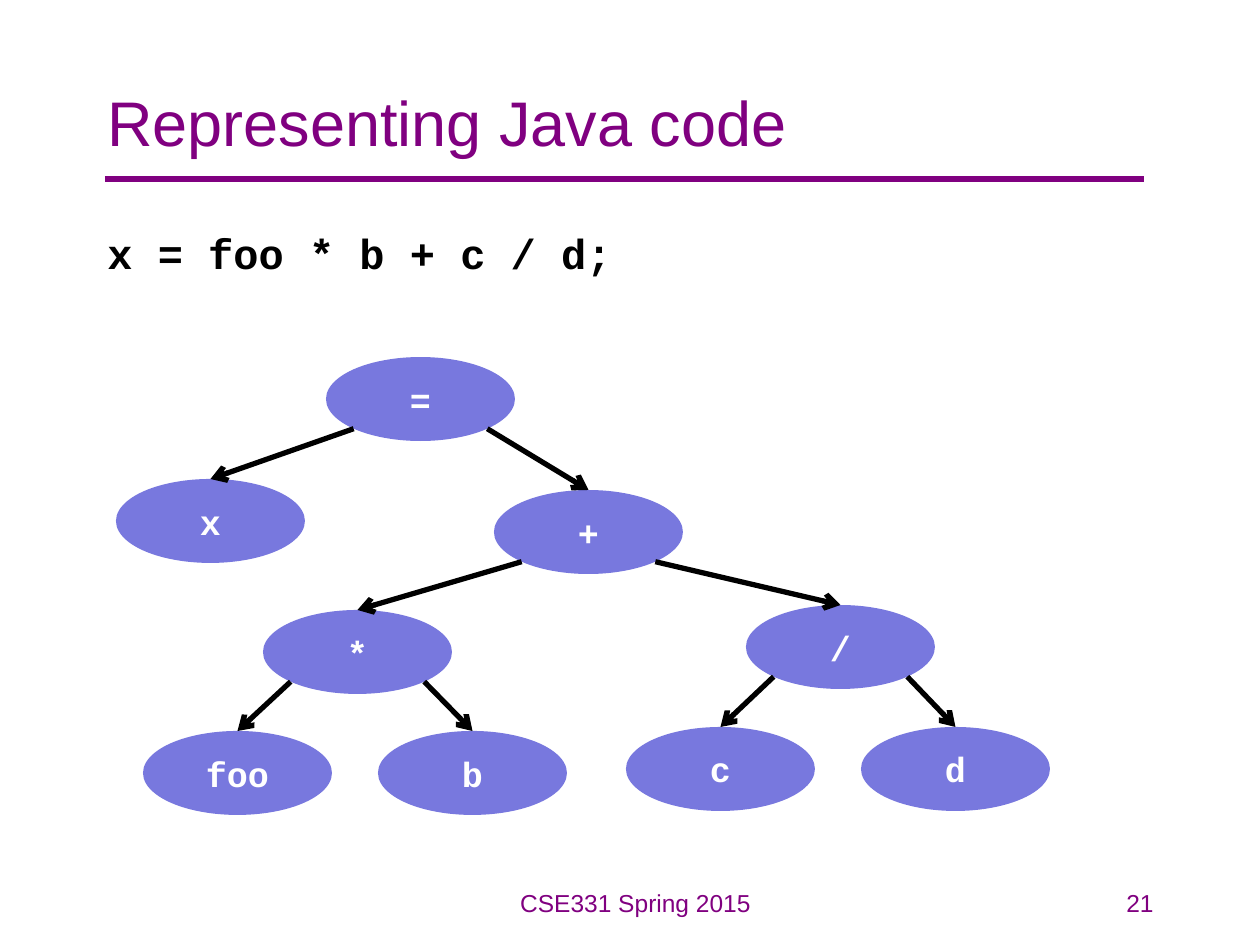
import math
from lxml import etree
from pptx import Presentation
from pptx.dml.color import RGBColor
from pptx.enum.shapes import MSO_CONNECTOR, MSO_SHAPE
from pptx.enum.text import MSO_ANCHOR, PP_ALIGN
from pptx.oxml.ns import qn
from pptx.util import Emu, Pt

LINE, OVAL = MSO_CONNECTOR.STRAIGHT, MSO_SHAPE.OVAL
TOP, MIDDLE = MSO_ANCHOR.TOP, MSO_ANCHOR.MIDDLE
LEFT, CENTER, RIGHT = PP_ALIGN.LEFT, PP_ALIGN.CENTER, PP_ALIGN.RIGHT

PURPLE, BLACK, WHITE, BLUE = "800080", "000000", "FFFFFF", "7878DE"
SANS, MONO = "Arial", "Courier New"
NODE_W, NODE_H = 189, 84

# Label: left, top (relative to the tree's box) and children
TREE = {
    "=": (210, 0, "x", "+"),
    "x": (0, 122),
    "+": (378, 133, "*", "/"),
    "*": (147, 253, "foo", "b"),
    "/": (630, 248, "c", "d"),
    "foo": (27, 374),
    "b": (262, 374),
    "c": (510, 370),
    "d": (745, 370),
}


def px(n):
    return Emu(round(n * 914400 / 126))


def paint(color, code):
    color.rgb = RGBColor.from_string(code)


def write(shape, text, size, code, face=SANS, align=LEFT, anchor=TOP,
          bold=False, before=0):
    frame = shape.text_frame
    frame.word_wrap = True
    frame.vertical_anchor = anchor
    para = frame.paragraphs[0]
    para.alignment = align
    para.space_before = Pt(before)
    run = para.add_run()
    run.text = text
    for name, value in {"size": Pt(size), "name": face, "bold": bold}.items():
        setattr(run.font, name, value)
    paint(run.font.color, code)


def label(slide, box, text, size, code, **look):
    shape = slide.shapes.add_textbox(*map(px, box))
    write(shape, text, size, code, **look)


def stroke(slide, ends, code, arrow=False):
    line = slide.shapes.add_connector(LINE, *map(px, ends))
    line.line.width = Pt(3)
    paint(line.line.color, code)
    props = line.line._get_or_add_ln()
    if arrow:
        etree.SubElement(props, qn("a:tailEnd"), type="arrow")
    etree.SubElement(props.getparent(), qn("a:effectLst"))


def header(slide, x, y, w, h):
    stroke(slide, (x + 10, y + 137, x + w - 22, y + 137), PURPLE)
    label(slide, (x, y, w, h), "Representing Java code", 36, PURPLE,
          anchor=MIDDLE)


def body(slide, x, y, w, h):
    label(slide, (x, y, w, h), "x = foo * b + c / d;", 24, BLACK,
          face=MONO, bold=True, before=4.8)


def tree(slide, x, y):
    # Nodes
    for name, (left, top, *_) in TREE.items():
        oval = slide.shapes.add_shape(
            OVAL, px(x + left), px(y + top), px(NODE_W), px(NODE_H))
        oval.shadow.inherit = False
        oval.fill.solid()
        paint(oval.fill.fore_color, BLUE)
        oval.line.fill.background()
        write(oval, name, 20, WHITE, face=MONO, align=CENTER,
              anchor=MIDDLE, bold=True)

    # Arrows run from a parent's lower diagonals to each child's top
    reach = math.sqrt(0.5)
    for left, top, *kids in TREE.values():
        for side, kid in zip((-1, 1), kids):
            end_x, end_y = TREE[kid][:2]
            stroke(slide, (x + left + NODE_W / 2 * (1 + side * reach),
                           y + top + NODE_H / 2 * (1 + reach),
                           x + end_x + NODE_W / 2, y + end_y), BLACK, True)


def footer(slide, x, y, w, h):
    label(slide, (x, y, 473, h), "CSE331 Spring 2015", 14, PURPLE,
          align=CENTER)
    label(slide, (x + w - 262, y, 262, h), "21", 14, PURPLE, align=RIGHT)


def main():
    deck = Presentation()
    deck.slide_width, deck.slide_height = px(1260), px(945)
    slide = deck.slides.add_slide(deck.slide_layouts[6])
    header(slide, 95, 42, 1071, 158)
    body(slide, 95, 221, 1071, 620)
    tree(slide, 116, 357)
    footer(slide, 399, 882, 767, 63)
    deck.save("out.pptx")


if __name__ == "__main__":
    main()
